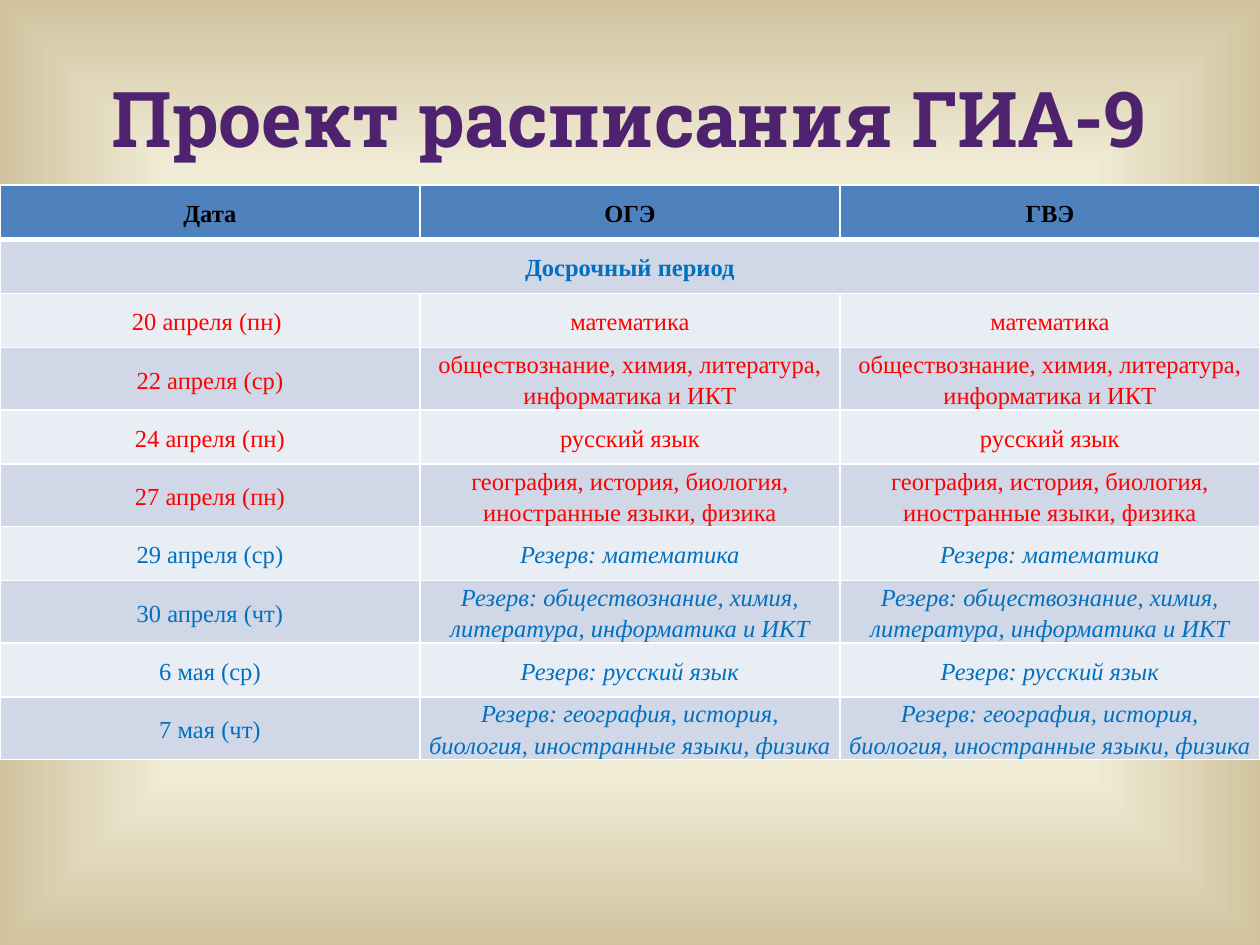
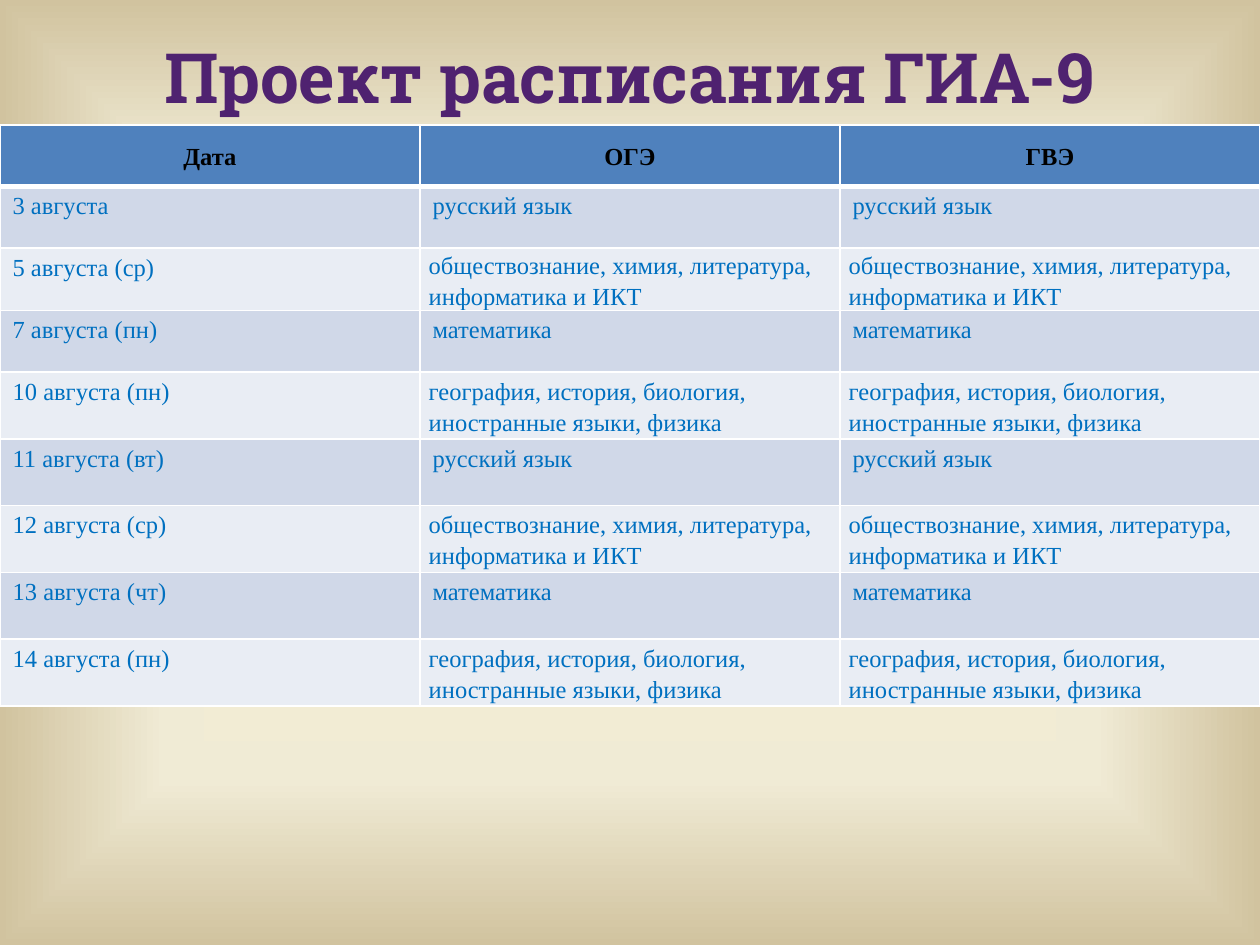
import pptx
import pptx.dml.color
import pptx.enum.text
import pptx.oxml
import pptx.oxml.ns
import pptx.util

Inches = pptx.util.Inches
Pt = pptx.util.Pt
RGBColor = pptx.dml.color.RGBColor
ALIGN = pptx.enum.text.PP_ALIGN
ANCHOR = pptx.enum.text.MSO_ANCHOR

BLACK = RGBColor(0x00, 0x00, 0x00)
WHITE = RGBColor(0xFF, 0xFF, 0xFF)
RED = RGBColor(0xFF, 0x00, 0x00)
BLUE = RGBColor(0x00, 0x70, 0xC0)
PURPLE = RGBColor(0x4F, 0x22, 0x70)
HEADER_FILL = RGBColor(0x4F, 0x81, 0xBD)
BAND_FILLS = [RGBColor(0xD0, 0xD8, 0xE8), RGBColor(0xE9, 0xED, 0xF4)]
BACKGROUND_STOPS = [
    (0, RGBColor(0xFF, 0xEF, 0xD1)),
    (65, RGBColor(0xF0, 0xEB, 0xD5)),
    (100, RGBColor(0xD1, 0xC3, 0x9F)),
]
TITLE_FONT = "Roboto Slab"
TABLE_FONT = "Times New Roman"

TITLE = "Проект расписания ГИА-9"
HEADERS = ["Дата", "ОГЭ", "ГВЭ"]
PERIOD = "Досрочный период"
MATH = "математика"
RUSSIAN = "русский язык"
SOCIAL = "обществознание, химия, литература, информатика и ИКТ"
GEOGRAPHY = "география, история, биология, иностранные языки, физика"

EARLY_MAIN = [
    ("20 апреля (пн) ", MATH),
    ("22 апреля (ср)", SOCIAL),
    ("24 апреля (пн)", RUSSIAN),
    ("27 апреля (пн)", GEOGRAPHY),
]
EARLY_RESERVE = [
    ("29 апреля (ср)", MATH),
    ("30 апреля (чт)", SOCIAL),
    ("6 мая (ср)", RUSSIAN),
    ("7 мая (чт)", GEOGRAPHY),
]
AUGUST = [
    ("3 августа", RUSSIAN),
    ("5 августа (ср)", SOCIAL),
    ("7 августа (пн)", MATH),
    ("10 августа (пн)", GEOGRAPHY),
    ("11 августа (вт)", RUSSIAN),
    ("12 августа (ср)", SOCIAL),
    ("13 августа (чт)", MATH),
    ("14 августа (пн)", GEOGRAPHY),
]
EARLY_HEIGHTS = [0.43] * 10
AUGUST_HEIGHTS = [0.49] * 4 + [0.53] * 5


def set_background(master):
    master.background.fill.solid()
    background = master.element.find(".//" + pptx.oxml.ns.qn("p:bgPr"))
    stops = "".join(
        f'<a:gs pos="{position * 1000}"><a:srgbClr val="{color}"/></a:gs>'
        for position, color in BACKGROUND_STOPS
    )
    gradient = pptx.oxml.parse_xml(
        f'<a:gradFill {pptx.oxml.ns.nsdecls("a")} rotWithShape="1"><a:gsLst>{stops}</a:gsLst>'
        '<a:path path="shape"><a:fillToRect l="50000" t="50000" r="50000" b="50000"/></a:path>'
        "</a:gradFill>"
    )
    background.replace(background[0], gradient)


def add_run(paragraph, text, font_name, size, color, bold=False, italic=False):
    run = paragraph.add_run()
    run.text = text
    run.font.name = font_name
    run.font.size = Pt(size)
    run.font.color.rgb = color
    run.font.bold = bold
    run.font.italic = italic


def add_titled_slide(presentation, top, height, size):
    slide = presentation.slides.add_slide(presentation.slide_layouts[5])
    title = slide.shapes.title
    title.left, title.top = Inches(0.5), Inches(top)
    title.width, title.height = Inches(9), Inches(height)
    frame = title.text_frame
    frame.auto_size = pptx.enum.text.MSO_AUTO_SIZE.NONE
    frame.vertical_anchor = ANCHOR.MIDDLE
    paragraph = frame.paragraphs[0]
    paragraph.alignment = ALIGN.CENTER
    add_run(paragraph, TITLE, TITLE_FONT, size, PURPLE, bold=True)
    return slide


def add_table(slide, top, heights):
    table = slide.shapes.add_table(
        len(heights), len(HEADERS), 0, Inches(top), Inches(10), Inches(sum(heights))
    ).table
    for column in table.columns:
        column.width = Inches(10 / len(HEADERS))
    for row, height in zip(table.rows, heights):
        row.height = Inches(height)
    for row_index, row in enumerate(table.rows):
        for cell in row.cells:
            cell.fill.solid()
            cell.fill.fore_color.rgb = BAND_FILLS[(row_index - 1) % 2] if row_index else HEADER_FILL
            set_borders(cell, 3 if row_index == 1 else 1, 1 if row_index else 3)
    for cell, text in zip(table.rows[0].cells, HEADERS):
        write_cell(cell, text, BLACK, bold=True)
    return table


def set_borders(cell, top_width, bottom_width):
    properties = cell._tc.get_or_add_tcPr()
    widths = [("lnL", 1), ("lnR", 1), ("lnT", top_width), ("lnB", bottom_width)]
    for index, (side, width) in enumerate(widths):
        properties.insert(index, pptx.oxml.parse_xml(
            f'<a:{side} {pptx.oxml.ns.nsdecls("a")} w="{Pt(width)}"><a:solidFill>'
            f'<a:srgbClr val="{WHITE}"/></a:solidFill></a:{side}>'
        ))


def write_cell(cell, text, color, bold=False, italic=False, alignment=ALIGN.CENTER, compact=True):
    paragraph = cell.text_frame.paragraphs[0]
    paragraph.alignment = alignment
    if compact:
        cell.vertical_anchor = ANCHOR.MIDDLE
        cell.margin_left = cell.margin_right = Inches(0.07)
        cell.margin_top = cell.margin_bottom = 0
        paragraph.line_spacing = 1.15
    add_run(paragraph, text, TABLE_FONT, 14, color, bold, italic)


def build_early_slide(presentation):
    slide = add_titled_slide(presentation, 0.3, 1.25, 44)
    table = add_table(slide, 1.47, EARLY_HEIGHTS)
    table.cell(1, 0).merge(table.cell(1, 2))
    write_cell(table.cell(1, 0), PERIOD, BLUE, bold=True)
    exams = [(date, subject, RED, False) for date, subject in EARLY_MAIN]
    exams += [(date, f"Резерв: {subject}", BLUE, True) for date, subject in EARLY_RESERVE]
    for row_index, (date, subject, color, reserve) in enumerate(exams, start=2):
        write_cell(table.cell(row_index, 0), date, color)
        for column_index in (1, 2):
            write_cell(table.cell(row_index, column_index), subject, color, italic=reserve)


def build_august_slide(presentation):
    slide = add_titled_slide(presentation, 0.3, 0.61, 39.6)
    table = add_table(slide, 0.99, AUGUST_HEIGHTS)
    for row_index, (date, subject) in enumerate(AUGUST, start=1):
        for column_index, text in enumerate((date, subject, subject)):
            write_cell(table.cell(row_index, column_index), text, BLUE,
                       alignment=ALIGN.LEFT, compact=text in (SOCIAL, GEOGRAPHY))


def main():
    presentation = pptx.Presentation()
    presentation.slide_width = Inches(10)
    presentation.slide_height = Inches(7.5)
    set_background(presentation.slide_master)
    build_early_slide(presentation)
    build_august_slide(presentation)
    presentation.save("out.pptx")


if __name__ == "__main__":
    main()
